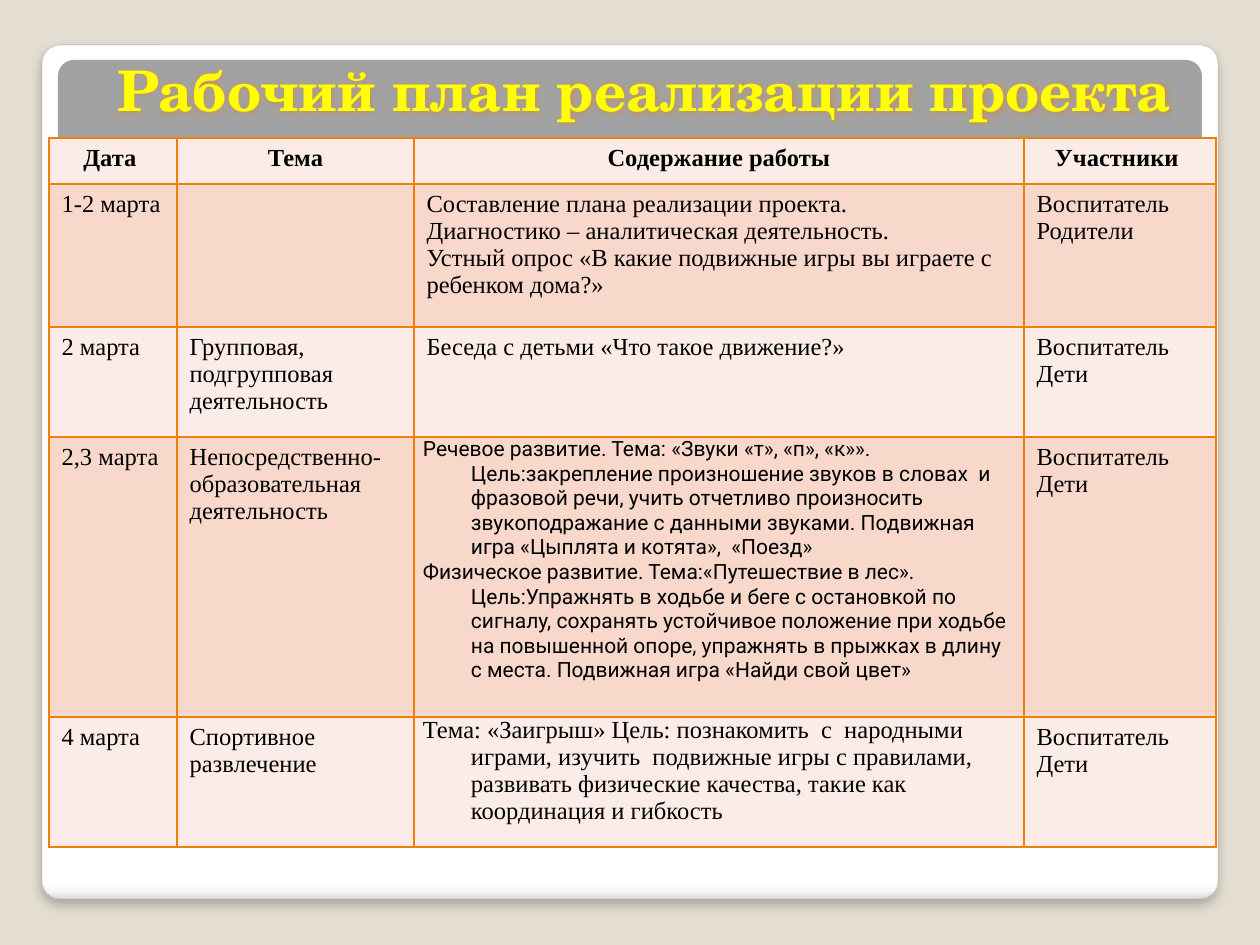
from dataclasses import dataclass

from lxml.etree import SubElement
from pptx import Presentation
from pptx.dml.color import RGBColor
from pptx.enum.shapes import MSO_SHAPE
from pptx.enum.text import PP_ALIGN
from pptx.oxml import parse_xml
from pptx.oxml.ns import nsdecls, qn
from pptx.util import Emu, Pt

EMU_PER_PX = 914400 / 126


def px(length):
    return Emu(round(length * EMU_PER_PX))


@dataclass(frozen=True)
class Theme:
    background: str = "E3DED1"
    panel_edge: str = "A4A4A4"
    panel_stops: tuple = ((0, "FFFFFF"), (98, "FFFFFF"), (99, "F7F7F7"), (100, "DADADA"))
    band: str = "A2A2A2"
    title: str = "FFFF00"
    title_outline: str = "7030A0"
    accent: str = "F07F09"
    text: str = "000000"
    row_fills: tuple = ("FCECE7", "F9D8CC")
    title_font: str = "TeX Gyre Schola"
    body_font: str = "Times New Roman"
    detail_font: str = "Roboto"
    title_size: int = 32
    body_size: int = 14
    detail_size: int = 12


THEME = Theme()


def solid_xml(color, alpha=100):
    return f'<a:solidFill><a:srgbClr val="{color}"><a:alpha val="{alpha * 1000}"/></a:srgbClr></a:solidFill>'


def write_text(para, text, *, font=THEME.body_font, size=THEME.body_size,
               color=THEME.text, bold=False, align=PP_ALIGN.LEFT, hanging=0):
    para.alignment = align
    if hanging:
        properties = para._p.get_or_add_pPr()
        properties.set("marL", str(px(hanging)))
        properties.set("indent", str(-px(hanging)))
    span = para.add_run()
    span.text = text
    span.font.name = font
    span.font.size = Pt(size)
    span.font.bold = bold
    span.font.color.rgb = RGBColor.from_string(color)
    return span


class SlideBuilder:
    def __init__(self, slide, theme):
        self.slide = slide
        self.theme = theme

    def background(self):
        fill = self.slide.background.fill
        fill.solid()
        fill.fore_color.rgb = RGBColor.from_string(self.theme.background)

    def rounded_box(self, left, top, width, height, color):
        box = self.slide.shapes.add_shape(
            MSO_SHAPE.ROUNDED_RECTANGLE, px(left), px(top), px(width), px(height))
        box.adjustments[0] = 0.021
        box.shadow.inherit = False
        box.fill.solid()
        box.fill.fore_color.rgb = RGBColor.from_string(color)
        box.line.fill.background()
        return box

    def panel(self, left, top, width, height):
        box = self.rounded_box(left, top, width, height, self.theme.background)
        box.line.color.rgb = RGBColor.from_string(self.theme.panel_edge)
        box.line.width = Pt(0.16)
        stops = "".join(f'<a:gs pos="{position * 1000}"><a:srgbClr val="{color}"/></a:gs>'
                        for position, color in self.theme.panel_stops)
        properties = box._element.spPr
        properties.replace(properties.find(qn("a:solidFill")), parse_xml(
            f'<a:gradFill {nsdecls("a")} rotWithShape="1"><a:gsLst>{stops}</a:gsLst>'
            '<a:lin ang="5400000" scaled="0"/></a:gradFill>'))
        properties.find(qn("a:effectLst")).append(parse_xml(
            f'<a:outerShdw {nsdecls("a")} blurRad="{Pt(6)}" dist="{Pt(4)}" dir="5400000" '
            'algn="t" rotWithShape="0"><a:srgbClr val="000000"><a:alpha val="25000"/>'
            '</a:srgbClr></a:outerShdw>'))

    def title(self, left, top, width, height, text):
        box = self.slide.shapes.add_textbox(px(left), px(top), px(width), px(height))
        box.text_frame.word_wrap = True
        span = write_text(box.text_frame.paragraphs[0], text, font=self.theme.title_font,
                          size=self.theme.title_size, color=self.theme.title,
                          bold=True, align=PP_ALIGN.CENTER)
        properties = span._r.get_or_add_rPr()
        properties.insert(0, parse_xml(
            f'<a:ln {nsdecls("a")} w="{Pt(1.5)}">{solid_xml(self.theme.title_outline)}</a:ln>'))
        properties.find(qn("a:solidFill")).addnext(parse_xml(
            f'<a:effectLst {nsdecls("a")}><a:glow rad="{Pt(5)}">'
            f'<a:srgbClr val="{self.theme.accent}"><a:alpha val="40000"/></a:srgbClr>'
            '</a:glow></a:effectLst>'))

    def borders(self, cell):
        properties = cell._tc.get_or_add_tcPr()
        for index, side in enumerate(("lnL", "lnR", "lnT", "lnB")):
            line = parse_xml(f'<a:{side} {nsdecls("a")} w="{Pt(1)}">'
                             f'{solid_xml(self.theme.accent)}</a:{side}>')
            properties.insert(index, line)
            SubElement(line, qn("a:prstDash")).set("val", "solid")

    def cell(self, cell, lines, fill, tight=False, **text_format):
        cell.fill.solid()
        cell.fill.fore_color.rgb = RGBColor.from_string(fill)
        if tight:
            cell.margin_left = cell.margin_right = px(9)
            cell.margin_top = cell.margin_bottom = 0
        frame = cell.text_frame
        for index, line in enumerate(lines):
            para = frame.add_paragraph() if index else frame.paragraphs[0]
            write_text(para, line, **text_format)
        self.borders(cell)

    def table(self, left, top, widths, heights, rows, formats):
        frame = self.slide.shapes.add_table(
            len(heights), len(widths), px(left), px(top), px(sum(widths)), px(sum(heights)))
        table = frame.table
        table.first_row = table.horz_banding = False
        for column, width in zip(table.columns, widths):
            column.width = px(width)
        for row, height in zip(table.rows, heights):
            row.height = px(height)
        for row_index, row in enumerate(rows):
            fill = self.theme.row_fills[row_index % 2]
            for column_index, lines in enumerate(row):
                text_format = formats.get((row_index, column_index), {})
                if row_index == 0:
                    text_format = {"bold": True, "align": PP_ALIGN.CENTER}
                self.cell(table.cell(row_index, column_index), lines, fill, **text_format)


CHILDREN = ["Воспитатель", "Дети"]
PLAN = [
    [["Дата "], ["Тема"], ["Содержание работы"], ["Участники "]],
    [["1-2 марта"], [],
     ["Составление плана реализации проекта.",
      "Диагностико – аналитическая деятельность.",
      "Устный опрос «В какие подвижные игры вы играете с ребенком дома?»"],
     ["Воспитатель", "Родители"]],
    [["2 марта"], ["Групповая, подгрупповая деятельность"],
     ["Беседа с детьми «Что такое движение?»"], CHILDREN],
    [["2,3 марта"], ["Непосредственно-образовательная деятельность"],
     ["Речевое развитие. Тема: «Звуки «т», «п», «к»». Цель:закрепление произношение "
      "звуков в словах  и фразовой речи, учить отчетливо произносить звукоподражание "
      "с данными звуками. Подвижная игра «Цыплята и котята»,  «Поезд»",
      "Физическое развитие. Тема:«Путешествие в лес». Цель:Упражнять в ходьбе и беге "
      "с остановкой по сигналу, сохранять устойчивое положение при ходьбе на повышенной "
      "опоре, упражнять в прыжках в длину с места. Подвижная игра «Найди свой цвет»"],
     CHILDREN],
    [["4 марта"], ["Спортивное развлечение"],
     ["Тема: «Заигрыш» Цель: познакомить  с  народными играми, изучить  подвижные игры "
      "с правилами, развивать физические качества, такие как координация и гибкость"],
     CHILDREN],
]
HANGING = {"tight": True, "hanging": 48}
FORMATS = {
    (3, 2): {**HANGING, "font": THEME.detail_font, "size": THEME.detail_size},
    (4, 2): HANGING,
}


def main():
    deck = Presentation()
    deck.slide_width, deck.slide_height = px(1260), px(945)
    page = SlideBuilder(deck.slides.add_slide(deck.slide_layouts[6]), THEME)
    page.background()
    page.panel(42, 45, 1176, 854)
    page.rounded_box(58, 60, 1144, 756, THEME.band)
    page.title(29, 49, 1231, 81, "Рабочий план реализации проекта")
    page.table(49, 138, (128, 237, 610, 192), (46, 143, 110, 280, 130), PLAN, FORMATS)
    deck.save("out.pptx")


if __name__ == "__main__":
    main()
